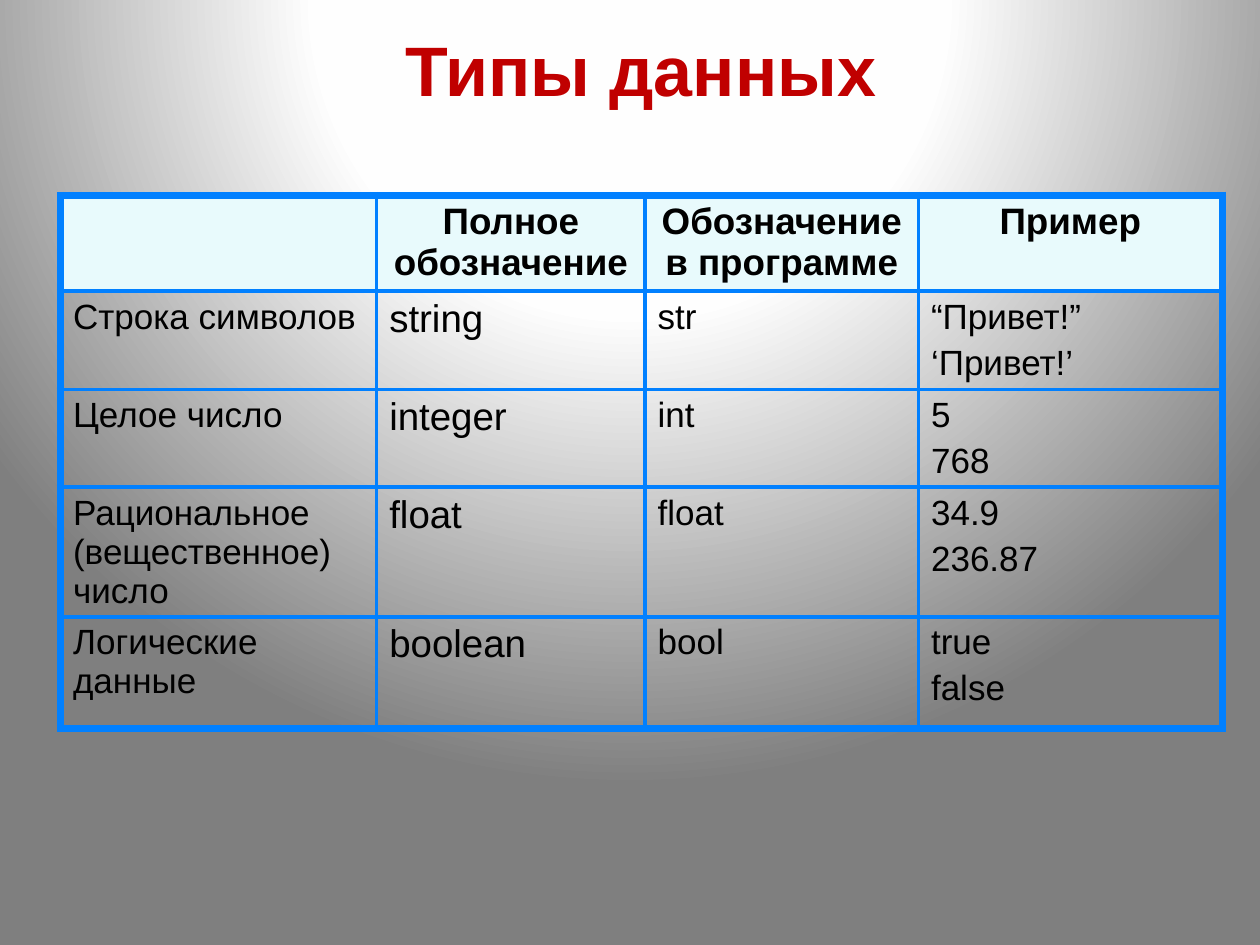
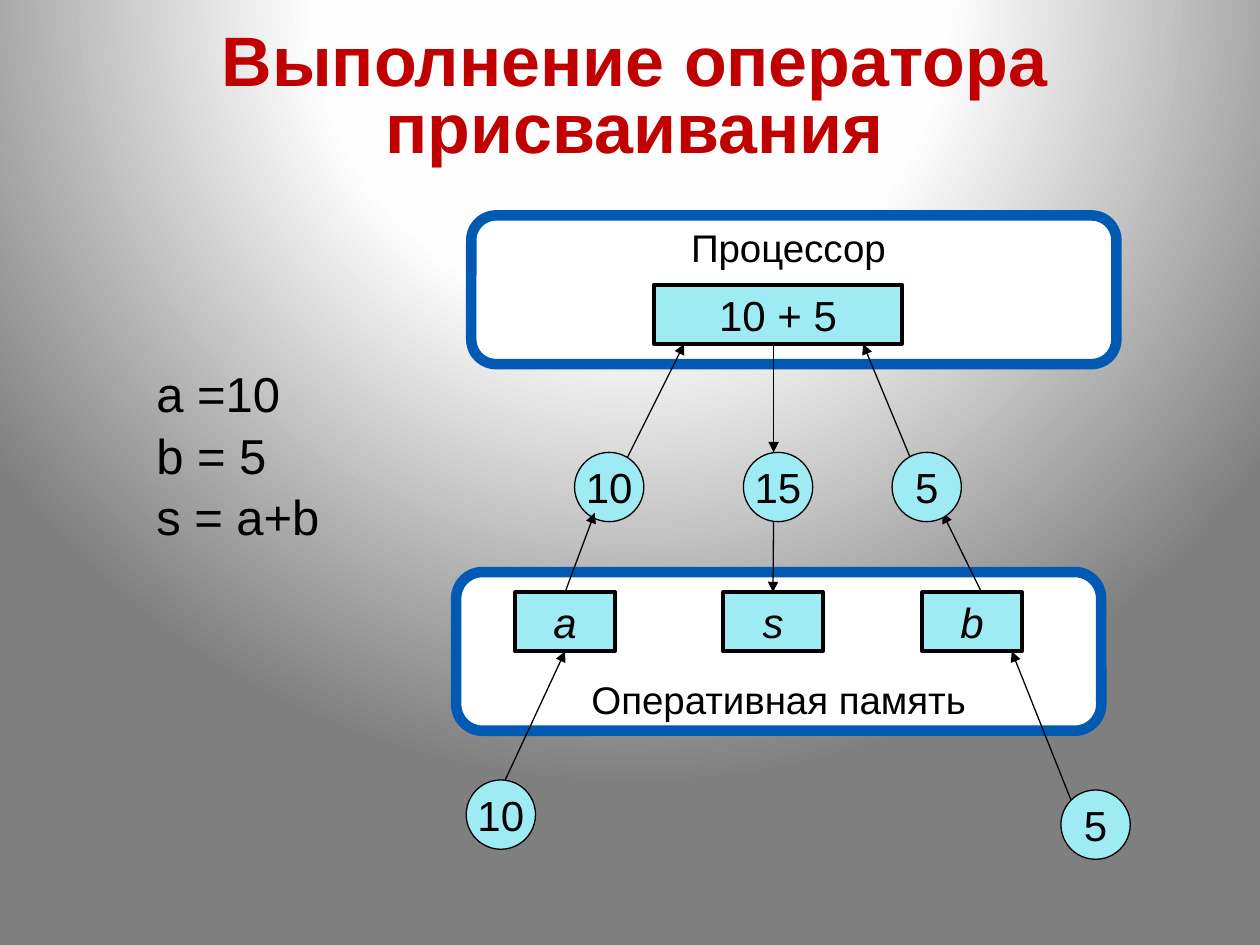
"""Build two lesson slides: a table of data types and an assignment diagram."""
from lxml import etree
from pptx import Presentation, util as u
from pptx.dml.color import RGBColor
from pptx.enum import shapes, text
from pptx.oxml import ns, parse_xml

SCALE = 9144
COLORS = {
    "title": "C00000", "ink": "000000", "paper": "FFFFFF", "grid": "0180FF",
    "header": "E8FAFC", "panel": "005AB4", "value": "9FEBF3",
    "glow": "FEFEFE", "edge": "7F7F7F",
}
TITLE = {"size": u.Pt(40), "bold": True}
HEADER = {"size": u.Pt(21), "bold": True}
CELL = {"size": u.Pt(20), "bold": False}
FULL_NAME = {"size": u.Pt(22), "bold": False}
LABEL = {"size": u.Pt(22)}
VALUE = {"size": u.Pt(24)}
VARIABLE = {"size": u.Pt(24), "italic": True}
CODE = {"size": u.Pt(28)}
CENTER = {"alignment": text.PP_ALIGN.CENTER}
TYPES = [
    ["", "Полное обозначение", "Обозначение в программе", "Пример"],
    ["Строка символов", "string", "str", "“Привет!”\n‘Привет!’"],
    ["Целое число", "integer", "int", "5\n768"],
    ["Рациональное (вещественное) число", "float", "float", "34.9\n236.87"],
    ["Логические данные", "boolean", "bool", "true\nfalse"],
]


def px(length):
    """Turn px into EMU."""
    return u.Emu(length * SCALE)


def rgb(name):
    """Look up a named colour."""
    return RGBColor.from_string(COLORS[name])


def apply(target, values):
    """Set attributes from a dict of format values."""
    for name, value in values.items():
        setattr(target, name, value)


class Deck:
    """Hold the style and the current slide."""

    def __init__(self):
        """Start the presentation with its shared background."""
        self.presentation = Presentation()
        apply(self.presentation, {"slide_width": px(1000), "slide_height": px(750)})
        self.slide = None
        master = self.presentation.slide_master
        master.background.fill.solid()
        properties = master.element.find(".//" + ns.qn("p:bgPr"))
        stops = "".join(
            f'<a:gs pos="{position}"><a:srgbClr val="{COLORS[name]}"/></a:gs>'
            for position, name in ((0, "paper"), (40000, "glow"), (100000, "edge")))
        properties.replace(properties[0], parse_xml(
            f'<a:gradFill {ns.nsdecls("a")} rotWithShape="1"><a:gsLst>{stops}</a:gsLst>'
            '<a:path path="circle"><a:fillToRect l="50000" t="-80000" r="50000" b="180000"/>'
            '</a:path></a:gradFill>'))

    def place(self, shape, box):
        """Move and size a shape."""
        apply(shape, dict(zip(("left", "top", "width", "height"), map(px, box))))

    def set_text(self, frame, content, font, layout, color="ink"):
        """Fill a frame with lines of formatted text."""
        frame.text = content
        for paragraph in frame.paragraphs:
            apply(paragraph, layout)
            apply(paragraph.font, {"name": "Arial", **font})
            paragraph.font.color.rgb = rgb(color)

    def add_slide(self, layout, title, box):
        """Add a slide with its title."""
        self.slide = self.presentation.slides.add_slide(
            self.presentation.slide_layouts[layout])
        shape = self.slide.shapes.title
        self.place(shape, box)
        apply(shape.text_frame, {"auto_size": text.MSO_AUTO_SIZE.NONE,
                                 "vertical_anchor": text.MSO_ANCHOR.MIDDLE})
        self.set_text(shape.text_frame, title, TITLE, {**CENTER, "line_spacing": 0.8}, "title")

    def body(self, content, box):
        """Fill the body placeholder with lines without bullets."""
        shape = self.slide.placeholders[1]
        self.place(shape, box)
        shape.text_frame.auto_size = text.MSO_AUTO_SIZE.NONE
        self.set_text(shape.text_frame, content, CODE,
                      {"line_spacing": 1.05, "space_before": u.Pt(0)})
        for paragraph in shape.text_frame.paragraphs:
            properties = paragraph._p.get_or_add_pPr()
            for name in ("marL", "indent"):
                properties.set(name, "0")
            properties.find(ns.qn("a:spcBef")).addnext(
                parse_xml(f'<a:buNone {ns.nsdecls("a")}/>'))

    def border(self, cell, widths):
        """Draw the four borders of a cell."""
        properties = cell._tc.get_or_add_tcPr()
        for side, width in zip("LRTB", widths):
            properties.append(parse_xml(
                f'<a:ln{side} {ns.nsdecls("a")} w="{int(u.Pt(width))}"><a:solidFill>'
                f'<a:srgbClr val="{COLORS["grid"]}"/></a:solidFill></a:ln{side}>'))

    def table(self, rows, left, top, widths, heights):
        """Add a table with a header row and a thick frame."""
        table = self.slide.shapes.add_table(
            len(rows), len(widths), px(left), px(top),
            px(sum(widths)), px(sum(heights))).table
        apply(table, {"first_row": False, "horz_banding": False})
        for column, width in zip(table.columns, widths):
            column.width = px(width)
        last_row, last_column = len(heights) - 1, len(widths) - 1
        for y, (row, height) in enumerate(zip(rows, heights)):
            table.rows[y].height = px(height)
            for x, content in enumerate(row):
                cell = table.cell(y, x)
                outer = (x == 0, x == last_column, y == 0, y == last_row)
                self.border(cell, [4.5 if thick else 2.25 for thick in outer])
                layout = {"space_before": u.Pt(4)}
                if y == 0:
                    cell.fill.solid()
                    cell.fill.fore_color.rgb = rgb("header")
                    self.set_text(cell.text_frame, content, HEADER, {**layout, **CENTER})
                else:
                    cell.fill.background()
                    font = FULL_NAME if x == 1 else CELL
                    self.set_text(cell.text_frame, content, font, layout)

    def shape(self, kind, box, content, font, fill, line, width, anchor="MIDDLE"):
        """Add a filled, outlined shape with centred text."""
        shape = self.slide.shapes.add_shape(shapes.MSO_SHAPE[kind], *map(px, box))
        shape.shadow.inherit = False
        shape.fill.solid()
        shape.fill.fore_color.rgb = rgb(fill)
        shape.line.color.rgb = rgb(line)
        shape.line.width = u.Pt(width)
        apply(shape.text_frame, {"word_wrap": False, "margin_top": px(1),
                                 "margin_bottom": px(1),
                                 "vertical_anchor": text.MSO_ANCHOR[anchor]})
        self.set_text(shape.text_frame, content, font, CENTER)
        return shape

    def panel(self, box, content, anchor):
        """Add a rounded device panel."""
        return self.shape("ROUNDED_RECTANGLE", box, content, LABEL,
                          "paper", "panel", 6, anchor)

    def cell_box(self, left, top, width, content, font):
        """Add a rectangular memory cell."""
        return self.shape("RECTANGLE", (left, top, width, 47), content, font,
                          "value", "ink", 2.25)

    def circle(self, left, top, content):
        """Add a circle with a moving value."""
        return self.shape("OVAL", (left, top, 55, 55), content, VALUE,
                          "value", "ink", 0.75)

    def arrow(self, start, end, begin=None, finish=None):
        """Add an arrow, joined to (shape, side) pairs if given."""
        connector = self.slide.shapes.add_connector(
            shapes.MSO_CONNECTOR.STRAIGHT, *map(px, start + end))
        if begin:
            connector.begin_connect(*begin)
        if finish:
            connector.end_connect(*finish)
        connector.line.color.rgb = rgb("ink")
        connector.line.width = u.Pt(0.75)
        properties = connector._element.spPr
        etree.SubElement(properties.find(ns.qn("a:ln")), ns.qn("a:tailEnd"), type="triangle")
        etree.SubElement(properties, ns.qn("a:effectLst"))


def data_types(deck):
    """Build the slide with the table of data types."""
    deck.add_slide(5, "Типы данных", (67, 21, 883, 79))
    deck.table(TYPES, 48, 155, [251, 213, 217, 241], [76, 78, 77, 103, 89])


def assignment(deck):
    """Build the slide with the assignment diagram."""
    deck.add_slide(1, "Выполнение оператора присваивания", (23, 36, 961, 87))
    deck.body("a =10\nb = 5\ns = a+b", (114, 281, 173, 151))
    deck.panel((362, 454, 512, 126), "Оперативная память", "BOTTOM")
    deck.panel((374, 171, 512, 118), "Процессор ", "TOP")
    deck.cell_box(519, 226, 197, "10 + 5", VALUE)
    cells = {name: deck.cell_box(left, 470, 79, name, VARIABLE)
             for name, left in (("a", 409), ("s", 574), ("b", 732))}
    deck.arrow((401, 619), (448, 517), finish=(cells["a"], 2))
    deck.arrow((614, 407), (614, 470), finish=(cells["s"], 0))
    for start, end in (((496, 367), (543, 273)), ((521, 281), (521, 281)),
                       ((850, 635), (803, 517)), ((779, 470), (748, 407)),
                       ((614, 273), (614, 359)), ((724, 367), (685, 273))):
        deck.arrow(start, end)
    for left, top, value in ((370, 619, "10"), (842, 627, "5"),
                             (456, 359, "10"), (590, 359, "15"), (708, 359, "5")):
        deck.circle(left, top, value)
    deck.arrow((448, 470), (472, 407), begin=(cells["a"], 0))


def main():
    """Build and save the slides."""
    deck = Deck()
    data_types(deck)
    assignment(deck)
    deck.presentation.save("out.pptx")


if __name__ == "__main__":
    main()
